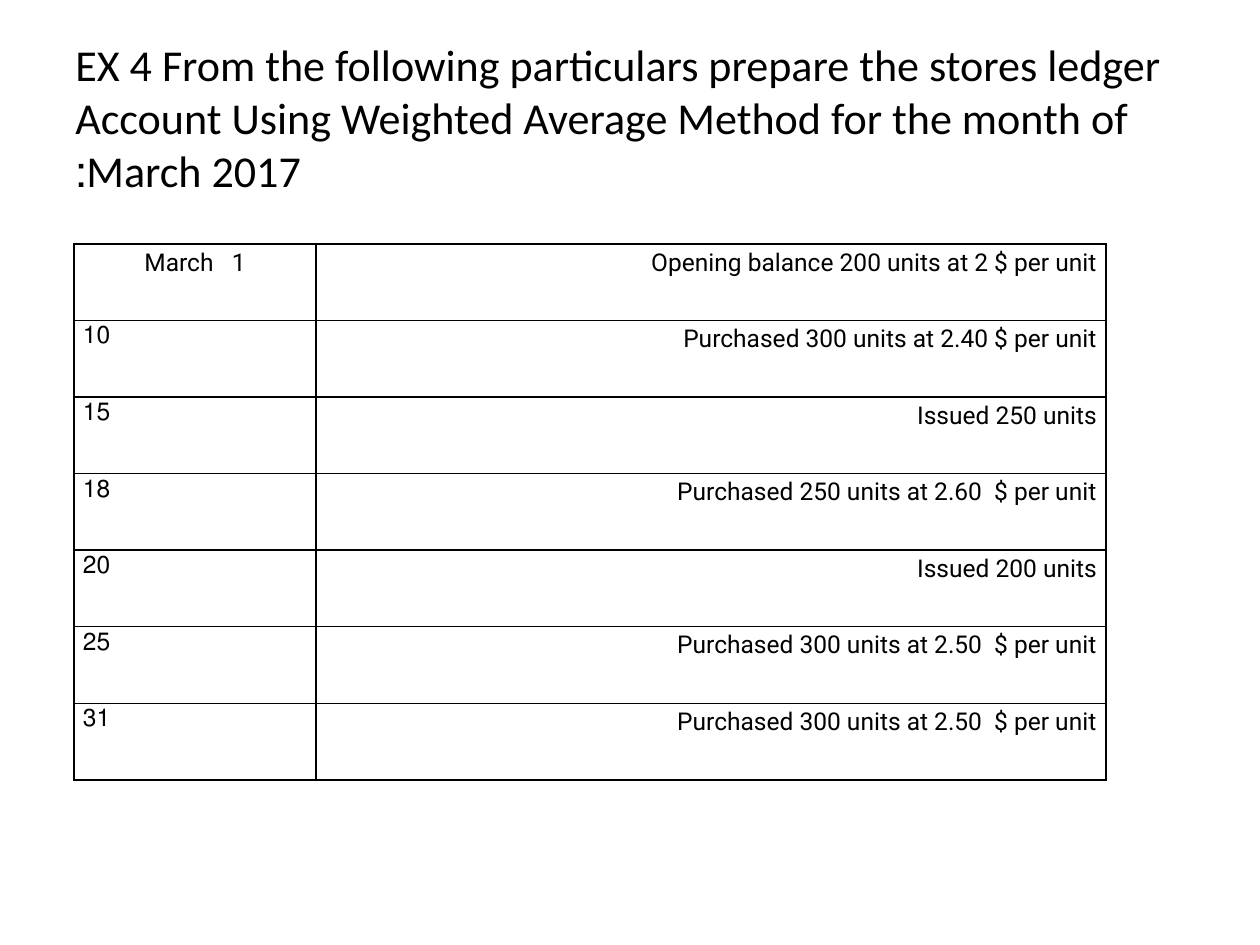
from typing import NamedTuple

from lxml import etree
from pptx import Presentation
from pptx.dml.color import RGBColor
from pptx.enum.text import MSO_ANCHOR, PP_ALIGN
from pptx.oxml.ns import qn
from pptx.util import Pt

LEFT, MID, RIGHT = PP_ALIGN.LEFT, PP_ALIGN.CENTER, PP_ALIGN.RIGHT
CENTER = MSO_ANCHOR.MIDDLE
PX = 914400 / 126  # EMU in one px
BLACK = "000000"
SIDES = ("a:lnL", "a:lnR", "a:lnT", "a:lnB")


class Box(NamedTuple):
    x: int
    y: int
    w: int
    h: int


class Entry(NamedTuple):
    day: str
    text: str
    align: PP_ALIGN = LEFT


TITLE = (
    "EX 4 From the following particulars prepare the stores ledger "
    "Account Using Weighted Average Method for the month of March 2017:"
)
TITLE_BOX = Box(63, 38, 1134, 158)
TABLE_BOX = Box(74, 244, 1032, 536)
DAY_W = 242
ENTRIES = [
    Entry("March   1", "Opening balance 200 units at 2 $ per unit", MID),
    Entry("10", "Purchased 300 units at 2.40 $ per unit"),
    Entry("15", "Issued 250 units"),
    Entry("18", "Purchased 250 units at 2.60  $ per unit"),
    Entry("20", "Issued 200 units"),
    Entry("25", "Purchased 300 units at 2.50  $ per unit"),
    Entry("31", "Purchased 300 units at 2.50  $ per unit"),
]


def px(n: float) -> int:
    return round(n * PX)


def color(code: str) -> RGBColor:
    return RGBColor.from_string(code)


def write(para, text: str, font: str, size: float, align: PP_ALIGN) -> None:
    """Fill one right-to-left paragraph."""
    para.text = text
    para.alignment = align
    para.font.name = font
    para.font.size = Pt(size)
    para.font.color.rgb = color(BLACK)
    para._p.get_or_add_pPr().set("rtl", "1")


def frame(cell) -> None:
    """Draw a thin line on all four sides of a cell."""
    props = cell._tc.get_or_add_tcPr()
    for spot, side in enumerate(SIDES):
        line = etree.Element(qn(side), w=str(Pt(1)))
        fill = etree.SubElement(line, qn("a:solidFill"))
        etree.SubElement(fill, qn("a:srgbClr"), val=BLACK)
        props.insert(spot, line)


def fill_cell(cell, text: str, align: PP_ALIGN) -> None:
    cell.fill.background()
    cell.margin_left = cell.margin_right = px(9)
    cell.margin_top = cell.margin_bottom = 0
    para = cell.text_frame.paragraphs[0]
    write(para, text, "Roboto", 14, align)
    para.line_spacing = 1.15
    para.space_after = Pt(10)
    frame(cell)


def add_title(slide) -> None:
    box = slide.shapes.add_textbox(*map(px, TITLE_BOX))
    body = box.text_frame
    body.word_wrap = True
    body.vertical_anchor = CENTER
    write(body.paragraphs[0], TITLE, "Calibri", 25.2, LEFT)


def add_ledger(slide) -> None:
    table = slide.shapes.add_table(len(ENTRIES), 2, *map(px, TABLE_BOX)).table
    table.first_row = table.horz_banding = False
    table.columns[0].width = px(DAY_W)
    table.columns[1].width = px(TABLE_BOX.w - DAY_W)
    for num, entry in enumerate(ENTRIES):
        fill_cell(table.cell(num, 0), entry.day, entry.align)
        fill_cell(table.cell(num, 1), entry.text, RIGHT)


def main() -> None:
    deck = Presentation()
    deck.slide_width, deck.slide_height = px(1260), px(945)
    slide = deck.slides.add_slide(deck.slide_layouts[6])
    add_title(slide)
    add_ledger(slide)
    deck.save("out.pptx")


if __name__ == "__main__":
    main()
